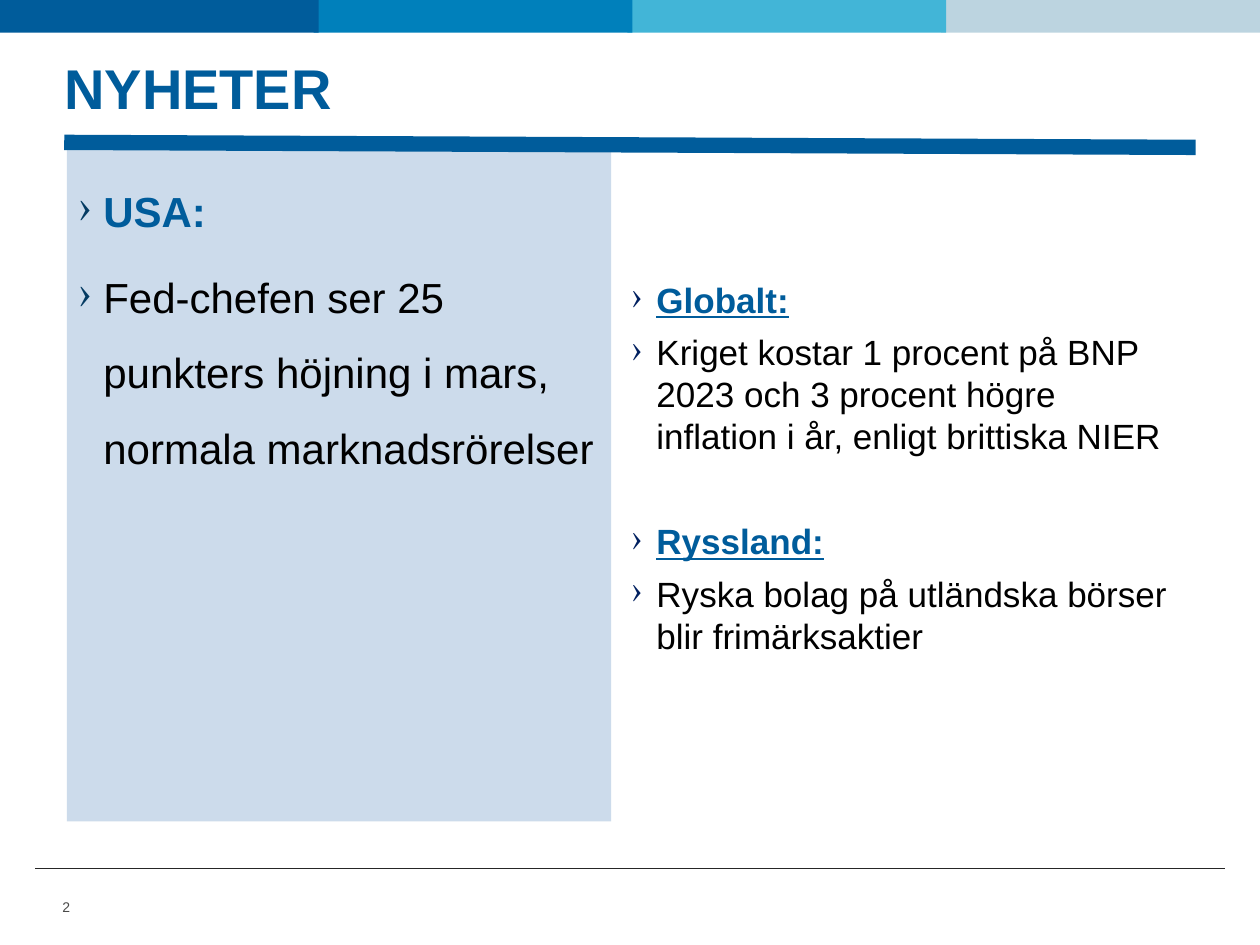
from lxml.etree import SubElement
from pptx import Presentation
from pptx.dml.color import RGBColor
from pptx.enum.shapes import MSO_CONNECTOR as Connector, MSO_SHAPE as Preset
from pptx.enum.text import MSO_ANCHOR as Anchor, PP_ALIGN as Align
from pptx.oxml.ns import qn
from pptx.util import Inches, Pt

COLUMNS, ROWS = 100, 75
SLIDE_WIDTH, SLIDE_HEIGHT = Inches(10), Inches(7.5)
FONT = "Arial"

BLUE = RGBColor(0x00, 0x5C, 0x9B)
MID_BLUE = RGBColor(0x00, 0x80, 0xBB)
SKY = RGBColor(0x42, 0xB5, 0xD7)
PALE = RGBColor(0xBC, 0xD4, 0xE0)
PANEL = RGBColor(0xCC, 0xDB, 0xEB)
NAVY = RGBColor(0x00, 0x20, 0x60)
DARK_BLUE = RGBColor(0x04, 0x3B, 0x62)
BLACK = RGBColor(0x00, 0x00, 0x00)
CHARCOAL = RGBColor(0x26, 0x26, 0x26)
GRAY = RGBColor(0x4A, 0x4A, 0x49)


def across(columns):
    return round(SLIDE_WIDTH * columns / COLUMNS)


def down(rows):
    return round(SLIDE_HEIGHT * rows / ROWS)


def grid_box(left, top, width, height):
    return across(left), down(top), across(width), down(height)


def add_block(slide, box, color):
    shape = slide.shapes.add_shape(Preset.RECTANGLE, *grid_box(*box))
    shape.shadow.inherit = False
    shape.fill.solid()
    shape.fill.fore_color.rgb = color
    shape.line.fill.background()


def add_line(slide, start, end, color, width):
    line = slide.shapes.add_connector(
        Connector.STRAIGHT,
        across(start[0]), down(start[1]), across(end[0]), down(end[1]),
    )
    line.line.color.rgb = color
    line.line.width = Pt(width)
    SubElement(line._element.spPr, qn("a:effectLst"))


def add_text_frame(slide, box, left_inset=0, anchor=Anchor.TOP):
    frame = slide.shapes.add_textbox(*grid_box(*box)).text_frame
    frame.word_wrap = True
    frame.vertical_anchor = anchor
    frame.margin_left = across(left_inset)
    frame.margin_right = across(1)
    frame.margin_top = frame.margin_bottom = down(0.5)
    return frame


def add_bullet(paragraph, color):
    properties = paragraph._p.get_or_add_pPr()
    properties.set("marL", str(across(2)))
    properties.set("indent", str(-across(2)))
    bullet_color = SubElement(properties, qn("a:buClr"))
    SubElement(bullet_color, qn("a:srgbClr"), val=str(color))
    SubElement(properties, qn("a:buChar"), char="›")


def write(frame, text, size, color=BLACK, bold=False, underline=False,
          align=Align.LEFT, spacing=None, before=0, bullet=None):
    first = frame.paragraphs[0]
    paragraph = frame.add_paragraph() if first.runs else first
    if bullet is not None:
        add_bullet(paragraph, bullet)
    paragraph.alignment = align
    paragraph.space_before = Pt(before)
    if spacing is not None:
        paragraph.line_spacing = spacing
    run = paragraph.add_run()
    run.text = text
    run.font.name = FONT
    run.font.size = Pt(size)
    run.font.bold = bold
    run.font.underline = underline
    run.font.color.rgb = color


def add_news(frame, heading, news, gap=0, underline=False, **style):
    write(frame, heading, color=BLUE, bold=True, underline=underline,
          before=gap, **style)
    write(frame, news, before=6, **style)


def add_color_band(slide):
    colors = [BLUE, MID_BLUE, SKY, PALE]
    for index in reversed(range(len(colors))):
        add_block(slide, (24.9 * index, 0, 25.3, 2.6), colors[index])


def main():
    presentation = Presentation()
    presentation.slide_width = SLIDE_WIDTH
    presentation.slide_height = SLIDE_HEIGHT
    slide = presentation.slides.add_slide(presentation.slide_layouts[6])

    add_color_band(slide)
    add_line(slide, (2.8, 68.9), (97.2, 68.9), CHARCOAL, 0.25)
    add_block(slide, (5.3, 11.2, 43.2, 54), PANEL)

    number = add_text_frame(slide, (3.3, 70.5, 3.9, 2.9), left_inset=1,
                            anchor=Anchor.MIDDLE)
    write(number, "2", size=8, color=GRAY, align=Align.CENTER)

    world = add_text_frame(slide, (50.1, 21.6, 44.8, 40.5))
    world_style = {"size": 20, "bullet": NAVY, "underline": True}
    world_news = [
        ("Globalt:", "Kriget kostar 1 procent på BNP 2023 och 3 procent högre "
                     "inflation i år, enligt brittiska NIER", 0),
        ("Ryssland:", "Ryska bolag på utländska börser blir frimärksaktier", 36),
    ]
    for heading, news, gap in world_news:
        write(world, heading, color=BLUE, bold=True, before=gap, **world_style)
        write(world, news, before=6, **{**world_style, "underline": False})

    usa = add_text_frame(slide, (6.2, 12.2, 42.8, 54.7))
    usa_style = {"size": 24, "bullet": DARK_BLUE, "spacing": 1.5}
    write(usa, "USA:", color=BLUE, bold=True, **usa_style)
    write(usa, "Fed-chefen ser 25 punkters höjning i mars, "
               "normala marknadsrörelser", before=6, **usa_style)

    add_line(slide, (94.9, 11.7), (5.1, 11.3), BLUE, 8.75)
    title = add_text_frame(slide, (5.1, 5.2, 89.8, 7.9))
    write(title, "NYHETER", size=32, color=BLUE, bold=True, spacing=Pt(28))

    presentation.save("out.pptx")


if __name__ == "__main__":
    main()
